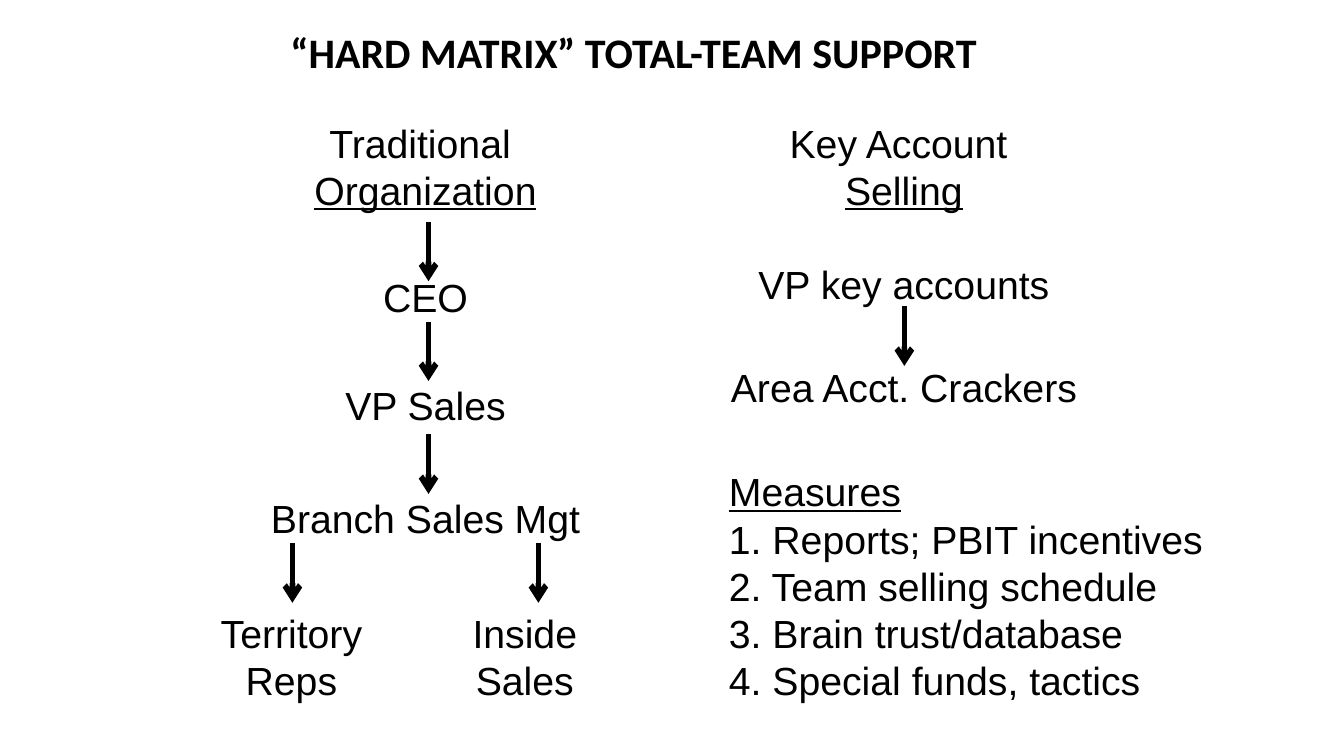
from lxml import etree
from pptx import Presentation
from pptx.dml.color import RGBColor
from pptx.enum.shapes import MSO_CONNECTOR
from pptx.enum.text import MSO_ANCHOR, MSO_AUTO_SIZE, PP_ALIGN
from pptx.oxml.ns import qn
from pptx.util import Inches, Pt

STRAIGHT = MSO_CONNECTOR.STRAIGHT
TOP, MIDDLE = MSO_ANCHOR.TOP, MSO_ANCHOR.MIDDLE
NO_RESIZE = MSO_AUTO_SIZE.NONE
LEFT, CENTER = PP_ALIGN.LEFT, PP_ALIGN.CENTER

BLACK = "000000"
ARROW_LENGTH = 0.59
TITLE_FONT = {"name": "Calibri", "size": Pt(30), "bold": True}
BODY_FONT = {"name": "Arial", "size": Pt(28), "bold": False}


def color(hex_value):
    """Return the colour for a hex string."""
    return RGBColor.from_string(hex_value)


def apply_format(target, values):
    """Set each attribute named in a dict of format values."""
    for name, value in values.items():
        setattr(target, name, value)


def place(shape, box):
    """Move a shape to a box of left, top, width and height in inches."""
    names = ("left", "top", "width", "height")
    apply_format(shape, dict(zip(names, map(Inches, box))))


def write_lines(text_frame, lines, alignment, line_spacing=1.0, font=BODY_FONT):
    """Write lines given as text, space before in points and underline."""
    for index, (text, space_before, underline) in enumerate(lines):
        paragraph = text_frame.paragraphs[0] if index == 0 else text_frame.add_paragraph()
        apply_format(paragraph, {
            "alignment": alignment,
            "line_spacing": line_spacing,
            "space_before": Pt(space_before),
            "space_after": Pt(0),
        })
        run = paragraph.add_run()
        run.text = text
        apply_format(run.font, {**font, "underline": underline})
        run.font.color.rgb = color(BLACK)


def add_down_arrow(slide, x, y):
    """Draw a downward arrow that starts at x, y."""
    arrow = slide.shapes.add_connector(
        STRAIGHT, Inches(x), Inches(y), Inches(x), Inches(y + ARROW_LENGTH))
    arrow.line.width = Pt(4)
    arrow.line.color.rgb = color(BLACK)
    properties = arrow._element.spPr
    etree.SubElement(properties.find(qn("a:ln")), qn("a:tailEnd"), type="arrow")
    etree.SubElement(properties, qn("a:effectLst"))


def add_title(slide, box):
    """Fill the title placeholder."""
    title = slide.shapes.title
    place(title, box)
    apply_format(title.text_frame, {
        "vertical_anchor": MIDDLE,
        "auto_size": NO_RESIZE,
        "margin_left": Inches(0.95),
    })
    write_lines(title.text_frame, [("“HARD MATRIX” TOTAL-TEAM SUPPORT", 0, False)],
                LEFT, 0.9, TITLE_FONT)


def add_chain(slide, box, lines, arrows):
    """Add a centred chain of roles with arrows offset from the box corner."""
    left, top = box[:2]
    text_box = slide.shapes.add_textbox(*map(Inches, box))
    text_box.text_frame.word_wrap = False
    write_lines(text_box.text_frame, lines, CENTER)
    for offset_x, offset_y in arrows:
        add_down_arrow(slide, left + offset_x, top + offset_y)


def add_measures(slide, box):
    """Fill the body placeholder with the list of measures."""
    body = slide.placeholders[1]
    place(body, box)
    apply_format(body.text_frame, {
        "vertical_anchor": TOP,
        "auto_size": NO_RESIZE,
        "word_wrap": False,
    })
    items = ["Reports; PBIT incentives", "Team selling schedule",
             "Brain trust/database", "Special funds, tactics"]
    lines = [("Measures", 0, True)]
    lines += [(f"{number}. {item}", 0, False) for number, item in enumerate(items, 1)]
    write_lines(body.text_frame, lines, LEFT)
    for paragraph in body.text_frame.paragraphs:
        properties = paragraph._p.get_or_add_pPr()
        properties.set("marL", "0")
        properties.set("indent", "0")
        etree.SubElement(properties, qn("a:buNone"))


def main():
    """Build and save the slide."""
    presentation = Presentation()
    presentation.slide_width = Inches(13.33)
    presentation.slide_height = Inches(7.5)
    slide = presentation.slides.add_slide(presentation.slide_layouts[1])
    add_title(slide, (1.93, 0.25, 9.44, 0.58))
    add_chain(slide, (2.57, 1.13, 3.3, 4.34), [
        ("Traditional ", 0, False), ("Organization", 0, True), ("CEO", 43.4, False),
        ("VP Sales", 43.4, False), ("Branch Sales Mgt", 46.9, False),
    ], [(1.68, 1.07), (1.68, 2.06), (1.68, 3.18)])
    add_chain(slide, (7.13, 1.13, 3.67, 3.49), [
        ("Key Account ", 0, False), ("Selling", 0, True),
        ("VP key accounts", 33.5, False), ("Area Acct. Crackers", 40.5, False),
    ], [(1.84, 1.91)])
    add_chain(slide, (2.08, 6, 1.62, 1.04),
              [("Territory", 0, False), ("Reps", 0, False)], [(0.82, -0.61)])
    add_chain(slide, (4.58, 6, 1.25, 1.04),
              [("Inside", 0, False), ("Sales", 0, False)], [(0.76, -0.61)])
    add_measures(slide, (7.13, 4.59, 4.96, 2.46))
    presentation.save("out.pptx")


if __name__ == "__main__":
    main()
